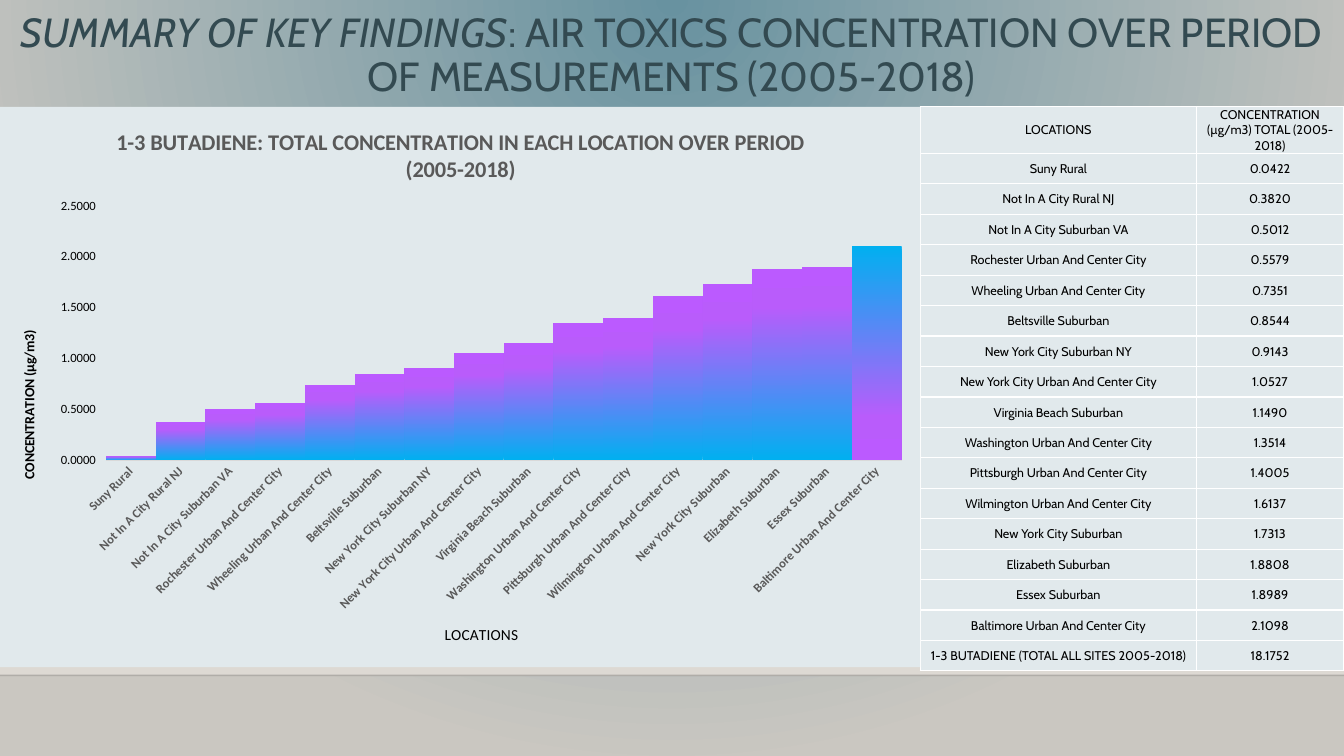
"""Build the slide on air toxics concentration by location."""
from pptx import Presentation, util as u
from pptx.chart.data import CategoryChartData
from pptx.dml.color import RGBColor
from pptx.enum import chart as ce, shapes, text
from pptx.oxml import parse_xml
from pptx.oxml.ns import nsdecls, qn

HEAD = ("SUMMARY OF KEY FINDINGS",
        ": AIR TOXICS CONCENTRATION OVER PERIOD OF MEASUREMENTS (2005-2018)")
SITES = [
    ("Suny Rural", 0.0422),
    ("Not In A City Rural NJ", 0.3820),
    ("Not In A City Suburban VA", 0.5012),
    ("Rochester Urban And Center City", 0.5579),
    ("Wheeling Urban And Center City", 0.7351),
    ("Beltsville Suburban", 0.8544),
    ("New York City Suburban NY", 0.9143),
    ("New York City Urban And Center City", 1.0527),
    ("Virginia Beach Suburban", 1.1490),
    ("Washington Urban And Center City", 1.3514),
    ("Pittsburgh Urban And Center City", 1.4005),
    ("Wilmington Urban And Center City", 1.6137),
    ("New York City Suburban", 1.7313),
    ("Elizabeth Suburban", 1.8808),
    ("Essex Suburban", 1.8989),
    ("Baltimore Urban And Center City", 2.1098),
]
COLS = ("LOCATIONS", "CONCENTRATION (µg/m3) TOTAL (2005-2018)")
TOTAL = "1-3 BUTADIENE (TOTAL ALL SITES 2005-2018)"
CHART = "1-3 BUTADIENE: TOTAL CONCENTRATION IN EACH LOCATION OVER PERIOD (2005-2018)"
UNIT = "CONCENTRATION (µg/m3)"

HUE = {"teal": "6892A0", "stone": "CAC7C1", "sand": "DFDBD5", "title": "334A51",
       "pale": "E1E9EC", "black": "000000", "gray": "595959", "rule": "D9D9D9",
       "white": "FFFFFF", "blue": "00B0F0", "violet": "B95CFB", "purple": "BB5AFF"}
BARS = [(0, "blue", 100), (80, "violet", 100), (100, "purple", 100)]
WIDE, HIGH = 33.87, 19.05
TOP, SPLIT, FLOOR = 2.69, 23.19, 17.02
BAND = 5.61
GRID, FIRST = 14.19, 1.14


def rgb(name):
    return RGBColor.from_string(HUE[name])


def style(font, size, hue, face="Calibri", bold=False):
    font.size, font.name, font.bold = u.Pt(size), face, bold
    font.color.rgb = rgb(hue)


def grade(owner, fill, stops, way):
    """Swap the first solid fill of the owner for a gradient."""
    fill.solid()
    fill.fore_color.rgb = rgb("white")
    gs = "".join(f'<a:gs pos="{pos * 1000}"><a:srgbClr val="{HUE[hue]}">'
                 f'<a:alpha val="{seen * 1000}"/></a:srgbClr></a:gs>'
                 for pos, hue, seen in stops)
    solid = owner.find(".//" + qn("a:solidFill"))
    solid.getparent().replace(solid, parse_xml(
        f'<a:gradFill {nsdecls("a")} rotWithShape="1"><a:gsLst>{gs}</a:gsLst>{way}</a:gradFill>'))


def slope(deg):
    return f'<a:lin ang="{deg * 60000}" scaled="0"/>'


def place(node, x, y, w=None, h=None):
    """Set a manual layout as percentages of the chart."""
    old = node.find(qn("c:layout"))
    if old is not None:
        node.remove(old)
    inner = '<c:layoutTarget val="inner"/>' if w else ""
    size = f'<c:w val="{w / 100}"/><c:h val="{h / 100}"/>' if w else ""
    new = parse_xml(
        f'<c:layout {nsdecls("c")}><c:manualLayout>{inner}<c:xMode val="edge"/>'
        f'<c:yMode val="edge"/><c:x val="{x / 100}"/><c:y val="{y / 100}"/>{size}'
        '</c:manualLayout></c:layout>')
    tx = node.find(qn("c:tx"))
    if tx is None:
        node.insert(0, new)
    else:
        tx.addnext(new)


def label(title, words, size, hue, bold, x, y):
    title.text_frame.text = words
    style(title.text_frame.paragraphs[0].runs[0].font, size, hue, bold=bold)
    place(title._element, x, y)


def add_head(slide):
    box = slide.shapes.title
    box.left, box.top, box.width, box.height = 0, u.Cm(0.3), u.Cm(WIDE), u.Cm(2.24)
    frame = box.text_frame
    frame.word_wrap = True
    frame.auto_size = text.MSO_AUTO_SIZE.NONE
    frame.vertical_anchor = text.MSO_ANCHOR.MIDDLE
    para = frame.paragraphs[0]
    para.alignment, para.line_spacing = text.PP_ALIGN.CENTER, 0.9
    for words, slant in zip(HEAD, (True, False)):
        run = para.add_run()
        run.text = words
        style(run.font, 29, "title", "Cabin")
        run.font.italic = slant


def add_back(slide):
    grade(slide._element, slide.background.fill,
          [(0, "teal", 100), (100, "stone", 100)],
          '<a:path path="circle"><a:fillToRect l="43000" t="0" r="43000" b="100000"/></a:path>')
    band = slide.shapes.add_shape(shapes.MSO_SHAPE.RECTANGLE, 0, u.Cm(BAND),
                                  u.Cm(WIDE), u.Cm(FLOOR - BAND))
    band.shadow.inherit = False
    band.line.fill.background()
    grade(band._element, band.fill, [(0, "sand", 0), (100, "sand", 100)], slope(90))
    rule = slide.shapes.add_connector(shapes.MSO_CONNECTOR.STRAIGHT, 0, u.Cm(FLOOR),
                                      u.Cm(WIDE), u.Cm(FLOOR))
    rule.line.width, rule.line.color.rgb = u.Pt(1), rgb("black")
    rule._element.find(".//" + qn("a:srgbClr")).append(
        parse_xml(f'<a:alpha {nsdecls("a")} val="20000"/>'))
    rule._element.spPr.append(parse_xml(f'<a:effectLst {nsdecls("a")}/>'))


def add_grid(slide):
    total = sum(val for _, val in SITES)
    rows = [COLS] + [(name, f"{val:.4f}") for name, val in SITES + [(TOTAL, total)]]
    rest = len(rows) - 1
    wide, high = (6.96, 3.71), [FIRST] + [(GRID - FIRST) / rest] * rest
    grid = slide.shapes.add_table(len(rows), 2, u.Cm(SPLIT), u.Cm(TOP),
                                  u.Cm(sum(wide)), u.Cm(GRID)).table
    for col, w in zip(grid.columns, wide):
        col.width = u.Cm(w)
    for i, row in enumerate(rows):
        grid.rows[i].height = u.Cm(high[i])
        for j, words in enumerate(row):
            cell = grid.cell(i, j)
            cell.margin_left = cell.margin_right = cell.margin_top = u.Cm(0.02)
            cell.margin_bottom = 0
            cell.vertical_anchor = text.MSO_ANCHOR.MIDDLE
            cell.text = words
            para = cell.text_frame.paragraphs[0]
            para.alignment = text.PP_ALIGN.CENTER
            style(para.runs[0].font, 9, "black", "Cabin")
            cell.fill.solid()
            cell.fill.fore_color.rgb = rgb("pale")
            for k, side in enumerate(("lnL", "lnR", "lnT", "lnB")):
                cell._tc.tcPr.insert(k, parse_xml(
                    f'<a:{side} {nsdecls("a")} w="12700"><a:solidFill>'
                    f'<a:srgbClr val="{HUE["white"]}"/></a:solidFill></a:{side}>'))


def add_plot(slide):
    data = CategoryChartData(number_format="0.0000")
    data.categories = [name for name, _ in SITES]
    data.add_series("Series 1", [round(val, 2) for _, val in SITES])
    chart = slide.shapes.add_chart(ce.XL_CHART_TYPE.COLUMN_CLUSTERED, 0, u.Cm(TOP),
                                   u.Cm(SPLIT), u.Cm(14.12), data).chart
    style(chart.font, 10, "black")
    chart.has_legend = False
    chart._chartSpace.find(qn("c:txPr")).addprevious(parse_xml(
        f'<c:spPr {nsdecls("c", "a")}><a:solidFill><a:srgbClr val="{HUE["pale"]}"/>'
        '</a:solidFill><a:ln><a:noFill/></a:ln></c:spPr>'))
    label(chart.chart_title, CHART, 16, "gray", True, 12.2, 2.8)
    chart.chart_title.include_in_layout = False
    place(chart._chartSpace.chart.plotArea, 11.5, 17.7, 86.5, 45.4)

    plot = chart.plots[0]
    plot.gap_width, plot.vary_by_categories = 0, False
    bars = plot.series[0]
    bars.invert_if_negative = False
    grade(bars._element, bars.format.fill, BARS, slope(270))
    last = bars.points[len(SITES) - 1]
    grade(bars._element, last.format.fill, BARS, slope(90))

    cat, val = chart.category_axis, chart.value_axis
    label(cat.axis_title, COLS[0], 11, "black", False, 48, 91.9)
    label(val.axis_title, UNIT, 10, "black", True, 1.9, 39.4)
    style(cat.tick_labels.font, 9, "gray", bold=True)
    style(val.tick_labels.font, 9, "black")
    cat._element.find(qn("c:txPr")).find(qn("a:bodyPr")).set("rot", "-2700000")
    cat.major_tick_mark = ce.XL_TICK_MARK.NONE
    cat.format.line.width, cat.format.line.color.rgb = u.Pt(1), rgb("rule")
    val.format.line.fill.background()
    val.has_major_gridlines = False
    val.minimum_scale, val.maximum_scale, val.major_unit = 0, 2.5, 0.5
    val.tick_labels.number_format = "0.0000"
    val.tick_labels.number_format_is_linked = False


def main():
    deck = Presentation()
    deck.slide_width, deck.slide_height = u.Cm(WIDE), u.Cm(HIGH)
    slide = deck.slides.add_slide(deck.slide_layouts[5])
    add_back(slide)
    add_head(slide)
    add_grid(slide)
    add_plot(slide)
    deck.save("out.pptx")


if __name__ == "__main__":
    main()
